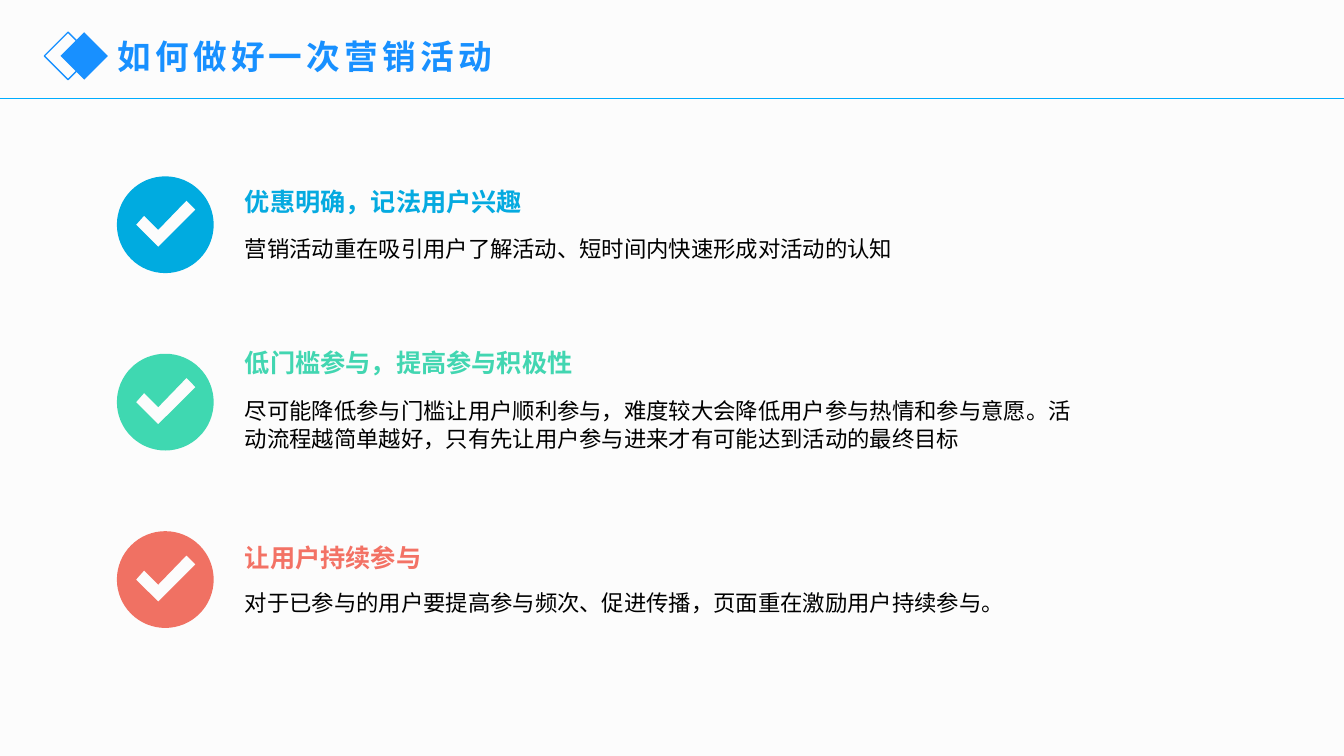
import math
from dataclasses import dataclass

import pptx
import pptx.dml.color
import pptx.enum.shapes
import pptx.enum.text
import pptx.oxml
import pptx.oxml.ns
import pptx.util

Inches = pptx.util.Inches
Pt = pptx.util.Pt
RGBColor = pptx.dml.color.RGBColor
Shapes = pptx.enum.shapes.MSO_SHAPE

FONT = "Noto Sans CJK SC"
LINE_HEIGHT = 1.22
BACKGROUND = RGBColor(0xFC, 0xFC, 0xFC)
BLACK = RGBColor(0x00, 0x00, 0x00)
TITLE_BLUE = RGBColor(0x18, 0x90, 0xFF)
RULE_BLUE = RGBColor(0x00, 0xAD, 0xFF)
SKY_TEXT = RGBColor(0x05, 0xAA, 0xE0)
SKY_BADGE = RGBColor(0x00, 0xAB, 0xE0)
MINT_TEXT = RGBColor(0x42, 0xD6, 0xB1)
MINT_BADGE = RGBColor(0x3F, 0xD8, 0xB1)
CORAL_TEXT = RGBColor(0xF3, 0x72, 0x65)
CORAL_BADGE = RGBColor(0xF0, 0x71, 0x63)

# Badge geometry, relative to the badge centre
BADGE_X = 1.64
BADGE_TOP = 2.23
BADGE_STEP = 1.76
BADGE_RADIUS = 0.48
BADGE_SIDES = 64
TICK = [(-0.07, 0.22), (-0.29, 0), (-0.21, -0.09), (-0.07, 0.05),
        (0.21, -0.24), (0.3, -0.15)]
TEXT_LEFT = 2.33


@dataclass
class Label:
    text: str
    top: float
    width: float
    height: float
    size: int
    color: RGBColor
    bold: bool = False
    left: float = TEXT_LEFT
    spacing: int = 0


@dataclass
class Tip:
    badge_color: RGBColor
    heading: Label
    body: Label


TITLE = Label("如何做好一次营销活动", 0.3, 5.49, 0.5, 24, TITLE_BLUE, True, 1.07, 300)
TIPS = [
    Tip(SKY_BADGE,
        Label("优惠明确，记法用户兴趣", 1.79, 3.9, 0.4, 18, SKY_TEXT, True),
        Label("营销活动重在吸引用户了解活动、短时间内快速形成对活动的认知",
              2.28, 7.07, 0.37, 16, BLACK)),
    Tip(MINT_BADGE,
        Label("低门槛参与，提高参与积极性", 3.39, 3.99, 0.4, 18, MINT_TEXT, True),
        Label("尽可能降低参与门槛让用户顺利参与，难度较大会降低用户参与热情和参与意愿。"
              "活动流程越简单越好，只有先让用户参与进来才有可能达到活动的最终目标",
              3.89, 8.55, 0.64, 16, BLACK)),
    Tip(CORAL_BADGE,
        Label("让用户持续参与", 5.33, 2.6, 0.4, 18, CORAL_TEXT, True),
        Label("对于已参与的用户要提高参与频次、促进传播，页面重在激励用户持续参与。",
              5.79, 7.85, 0.37, 16, BLACK)),
]


def add_label(page, label: Label) -> None:
    box = page.shapes.add_textbox(Inches(label.left), Inches(label.top),
                                  Inches(label.width), Inches(label.height))
    frame = box.text_frame
    frame.word_wrap = True
    frame.auto_size = pptx.enum.text.MSO_AUTO_SIZE.SHAPE_TO_FIT_TEXT
    para = frame.paragraphs[0]
    para.line_spacing = Pt(label.size * LINE_HEIGHT)
    span = para.add_run()
    span.text = label.text
    formats = {"name": FONT, "size": Pt(label.size), "bold": label.bold}
    for name, value in formats.items():
        setattr(span.font, name, value)
    span.font.color.rgb = label.color
    # East Asian typeface and letter spacing
    properties = span.font._element
    if label.spacing:
        properties.set("spc", str(label.spacing))
    east_asian = pptx.oxml.parse_xml(
        f'<a:ea {pptx.oxml.ns.nsdecls("a")} typeface="{FONT}"/>')
    properties.find(pptx.oxml.ns.qn("a:latin")).addnext(east_asian)


def add_diamond(page, left: float, filled: bool) -> None:
    diamond = page.shapes.add_shape(Shapes.DIAMOND, Inches(left), Inches(0.32),
                                    Inches(0.47), Inches(0.47))
    diamond.shadow.inherit = False
    if filled:
        diamond.fill.solid()
        diamond.fill.fore_color.rgb = TITLE_BLUE
        diamond.line.fill.background()
    else:
        diamond.fill.background()
        diamond.line.color.rgb = TITLE_BLUE
        diamond.line.width = Pt(1)


def add_badge(page, center_y: float, color: RGBColor) -> None:
    """Draw a disc with a tick cut out of it."""
    def place(x: float, y: float) -> tuple[int, int]:
        return Inches(BADGE_X + x), Inches(center_y + y)

    angles = [2 * math.pi * side / BADGE_SIDES for side in range(BADGE_SIDES)]
    disc = [place(BADGE_RADIUS * math.sin(angle), -BADGE_RADIUS * math.cos(angle))
            for angle in angles]
    tick = [place(x, y) for x, y in TICK]
    builder = page.shapes.build_freeform(*disc[0])
    builder.add_line_segments(disc[1:], close=True)
    builder.move_to(*tick[0])
    builder.add_line_segments(tick[1:], close=True)
    badge = builder.convert_to_shape()
    badge.shadow.inherit = False
    badge.fill.solid()
    badge.fill.fore_color.rgb = color
    badge.line.fill.background()


def add_header(page, width: int) -> None:
    rule = page.shapes.add_connector(pptx.enum.shapes.MSO_CONNECTOR.STRAIGHT,
                                     0, Inches(0.98), width, Inches(0.98))
    rule.line.color.rgb = RULE_BLUE
    rule.line.width = Pt(1)
    rule._element.spPr.append(pptx.oxml.parse_xml(
        f'<a:effectLst {pptx.oxml.ns.nsdecls("a")}/>'))
    add_diamond(page, 0.44, filled=False)
    add_diamond(page, 0.6, filled=True)
    add_label(page, TITLE)


def main() -> None:
    deck = pptx.Presentation()
    deck.slide_width = Inches(13.33)
    deck.slide_height = Inches(7.5)
    page = deck.slides.add_slide(deck.slide_layouts[6])
    page.background.fill.solid()
    page.background.fill.fore_color.rgb = BACKGROUND

    add_header(page, deck.slide_width)
    for index, tip in enumerate(TIPS):
        add_badge(page, BADGE_TOP + index * BADGE_STEP, tip.badge_color)
        add_label(page, tip.heading)
        add_label(page, tip.body)
    deck.save("out.pptx")


if __name__ == "__main__":
    main()
